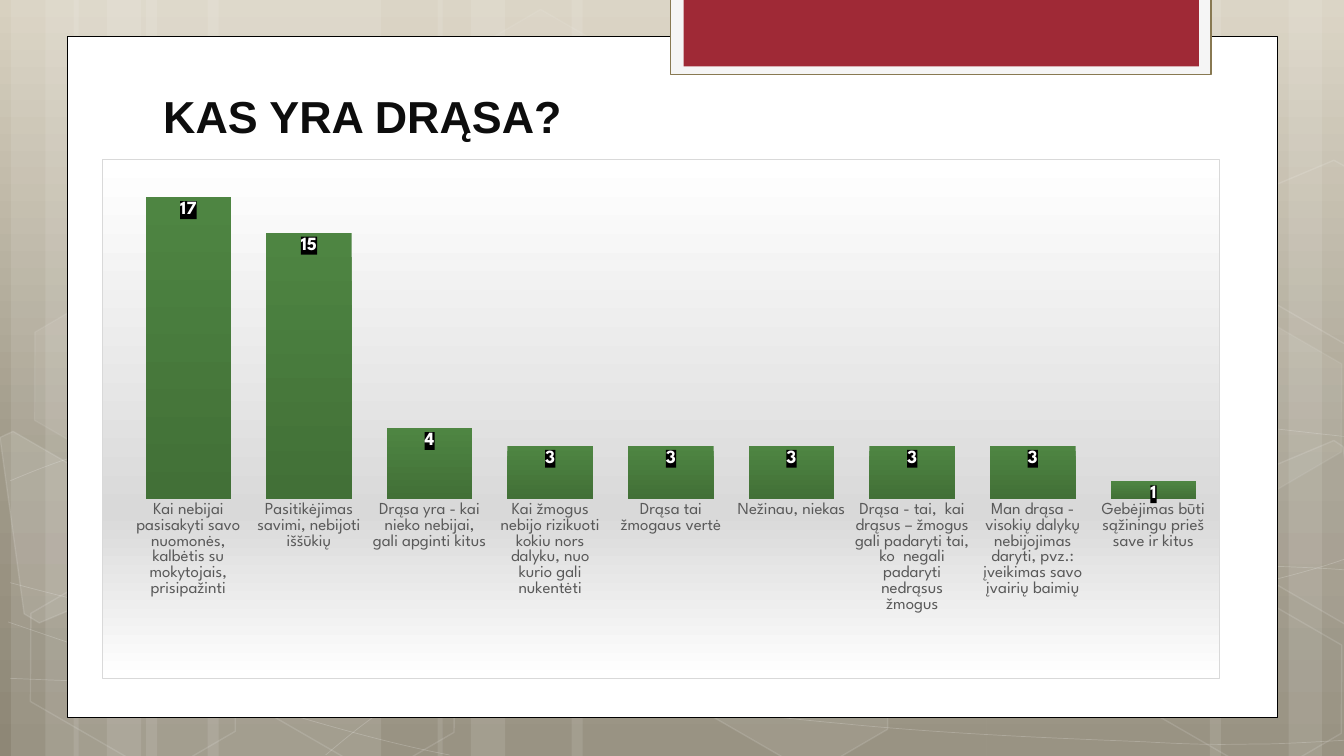
import pptx
import pptx.chart.data
import pptx.dml.color
import pptx.enum.chart
import pptx.enum.shapes
import pptx.enum.text
import pptx.oxml
import pptx.oxml.ns
import pptx.util

Inches = pptx.util.Inches
Pt = pptx.util.Pt
qn = pptx.oxml.ns.qn
RGB = pptx.dml.color.RGBColor.from_string
SHAPE = pptx.enum.shapes.MSO_SHAPE
NS = pptx.oxml.ns.nsdecls("a", "c")

COLORS = {
    "white": "FFFFFF", "black": "000000", "frame": "F5F5F5", "gold": "887952",
    "red": "9F2936", "title": "0D0D0D", "axis": "595959", "border": "D9D9D9",
    "sand": "D8D1C0", "stone": "9F9988", "earth": "8E8776",
    "green": "4E8542", "dark_green": "427037",
}
CHART_FONT = "League Spartan"


def gradient(stops):
    gs = "".join(
        f'<a:gs pos="{pos * 1000}"><a:srgbClr val="{COLORS[name]}"/></a:gs>'
        for pos, name in stops)
    return pptx.oxml.parse_xml(
        f'<a:gradFill {NS} rotWithShape="1"><a:gsLst>{gs}</a:gsLst>'
        '<a:lin ang="5400000" scaled="0"/></a:gradFill>')


def style(sp, fill=None, fill_alpha=100, line=None, width=1, line_alpha=100):
    sp.shadow.inherit = False
    for part, color, alpha in ((sp.fill, fill, fill_alpha), (sp.line.fill, line, line_alpha)):
        if color is None:
            part.background()
            continue
        part.solid()
        part.fore_color.rgb = RGB(COLORS[color])
        if alpha < 100:
            clr = part._xPr.find(".//" + qn("a:srgbClr"))
            clr.append(pptx.oxml.parse_xml(f'<a:alpha {NS} val="{alpha * 1000}"/>'))
    if line:
        sp.line.width = Pt(width)


prs = pptx.Presentation()
prs.slide_width = Inches(13.33)
prs.slide_height = Inches(7.5)
s = prs.slides.add_slide(prs.slide_layouts[6])
s.background.fill.solid()
bg = s._element.find(".//" + qn("p:bgPr"))
bg.replace(bg[0], gradient([(0, "sand"), (62, "stone"), (100, "earth")]))

stripes = [
    (1.45, 2.33), (0.11, 0.67), (0.45, 1.11), (2.06, 2.33), (0.73, 0.67), (1.06, 1.11),
    (9.78, 2.33), (12.78, 0.67), (12, 1.11), (5.67, 4.11), (4.34, 0.67), (4.67, 1.11),
]
for x, w in stripes:
    sp = s.shapes.add_shape(SHAPE.RECTANGLE, Inches(x), 0, Inches(w), Inches(7.5))
    style(sp, "white", 10)

waves = [
    [(0.1, 6.73), (0.82, 6.76), (1.54, 6.79), (2.54, 6.78), (3.54, 6.77), (4.77, 6.75),
     (6.1, 6.65), (7.44, 6.55), (9.33, 6.36), (10.55, 6.17), (11.78, 5.98), (13.03, 5.68),
     (13.43, 5.51)],
    [(0.1, 4.77), (0.48, 4.61), (0.86, 4.46), (1.62, 4.31), (2.38, 4.16), (3.45, 3.94),
     (4.63, 3.87), (5.82, 3.8), (7.25, 3.79), (8.72, 3.87), (10.19, 3.95), (12.63, 4.26),
     (13.43, 4.34)],
    [(0.08, 6.17), (1.69, 6.72), (3.3, 7.27), (4.46, 7.49)],
    [(0.1, 5.78), (0.51, 5.89), (0.93, 6), (1.71, 6.16), (2.48, 6.31), (3.64, 6.56),
     (4.75, 6.73), (5.86, 6.9), (7.27, 7.08), (8.37, 7.18), (9.48, 7.29), (10.66, 7.33),
     (11.37, 7.36), (12.07, 7.4), (12.25, 7.38), (12.6, 7.38), (12.94, 7.37),
     (13.19, 7.35), (13.43, 7.34)],
    [(3.23, 7.49), (3.47, 7.29), (3.7, 7.09), (4.03, 6.91), (4.35, 6.73), (4.8, 6.53),
     (5.17, 6.39), (5.54, 6.25), (5.77, 6.19), (6.26, 6.09), (6.75, 5.99), (7.65, 5.85),
     (8.11, 5.78), (8.58, 5.71), (8.65, 5.71), (9.07, 5.69), (9.48, 5.66), (10.13, 5.63),
     (10.59, 5.62), (11.05, 5.61), (11.82, 5.62), (11.82, 5.62), (12.1, 5.62),
     (12.4, 5.62), (12.7, 5.62), (12.95, 5.63), (13.17, 5.64), (13.29, 5.65),
     (13.41, 5.66), (13.37, 5.65), (13.41, 5.66)],
]
for wave in waves:
    points = [(Inches(x), Inches(y)) for x, y in wave]
    fb = s.shapes.build_freeform(*points[0])
    fb.add_line_segments(points[1:], close=False)
    sp = fb.convert_to_shape()
    outline = sp._element.find(".//" + qn("a:path"))
    segments = outline.findall(qn("a:lnTo"))
    for i in range(0, len(segments), 3):
        curve = pptx.oxml.parse_xml(f"<a:cubicBezTo {NS}/>")
        segments[i].addprevious(curve)
        for segment in segments[i:i + 3]:
            curve.append(segment[0])
            outline.remove(segment)
    style(sp, line="white", width=0.5, line_alpha=20)

hexagons = [
    (4.45, 0.36, 4, 8), (6.62, 5.89, 6, 12), (0.15, 5.91, 0, 12), (0.19, 3.12, 7, 8),
    (2.32, 5.92, 0, 12), (11.12, 5.93, 0, 12), (11.12, 3.14, 7, 8),
]
for x, y, fill_alpha, line_alpha in hexagons:
    sp = s.shapes.add_shape(SHAPE.HEXAGON, Inches(x), Inches(y), Inches(2.34), Inches(1.52))
    sp.adjustments[0] = 0.285
    sp.rotation = 30
    style(sp, "white" if fill_alpha else None, fill_alpha, "white", 1, line_alpha)

edge_pieces = [
    (10, [(0, 4.34), (0.13, 4.28), (1.15, 4.87), (1.27, 5.81), (0.39, 6.18), (0.24, 6.09)]),
    (4, [(12.35, 4.74), (13.23, 4.37), (13.32, 4.43), (13.57, 6.25), (13.49, 6.28),
         (12.47, 5.69)]),
    (0, [(12.35, 1.96), (13.23, 1.59), (13.34, 1.65), (13.57, 3.46), (13.49, 3.5),
         (12.47, 2.91)]),
]
for fill_alpha, corners in edge_pieces:
    points = [(Inches(x), Inches(y)) for x, y in corners]
    fb = s.shapes.build_freeform(*points[0])
    fb.add_line_segments(points[1:], close=True)
    style(fb.convert_to_shape(), "white" if fill_alpha else None, fill_alpha, "white", 1, 12)

panels = [
    (0.67, 0.36, 12, 6.76, "white", "black", 0.5),
    (6.65, -0.02, 5.36, 0.76, "frame", "gold", 1.25),
    (6.78, -0.02, 5.11, 0.68, "red", None, 0),
]
for x, y, w, h, fill, line, width in panels:
    sp = s.shapes.add_shape(SHAPE.RECTANGLE, Inches(x), Inches(y), Inches(w), Inches(h))
    style(sp, fill, line=line, width=width)

title = s.shapes.add_textbox(Inches(1.52), Inches(0.82), Inches(10.24), Inches(0.64))
tf = title.text_frame
tf.word_wrap = True
tf.vertical_anchor = pptx.enum.text.MSO_ANCHOR.BOTTOM
tf.text = "KAS YRA DRĄSA?"
font = tf.paragraphs[0].runs[0].font
font.name, font.size, font.bold = "Arial", Pt(32), True
font.color.rgb = RGB(COLORS["title"])

answers = {
    "Kai nebijai pasisakyti savo nuomonės, kalbėtis su mokytojais, prisipažinti": 17,
    "Pasitikėjimas savimi, nebijoti iššūkių": 15,
    "Drąsa yra - kai nieko nebijai, gali apginti kitus": 4,
    "Kai žmogus nebijo rizikuoti kokiu nors dalyku, nuo kurio gali nukentėti": 3,
    "Drąsa tai žmogaus vertė": 3,
    "Nežinau, niekas": 3,
    "Drąsa - tai,  kai drąsus – žmogus gali padaryti tai, ko  negali padaryti nedrąsus žmogus": 3,
    "Man drąsa - visokių dalykų nebijojimas daryti, pvz.: įveikimas savo įvairių baimių": 3,
    "Gebėjimas būti sąžiningu prieš save ir kitus": 1,
}
data = pptx.chart.data.CategoryChartData()
data.categories = list(answers)
data.add_series("Series 1", list(answers.values()))
chart = s.shapes.add_chart(
    pptx.enum.chart.XL_CHART_TYPE.COLUMN_CLUSTERED,
    Inches(1.01), Inches(1.58), Inches(11.09), Inches(5.16), data).chart
chart.has_legend = False
chart.has_title = False
chart.font.name, chart.font.size = CHART_FONT, Pt(10)
chart.font.color.rgb = RGB(COLORS["black"])

axis = chart.category_axis
axis.major_tick_mark = pptx.enum.chart.XL_TICK_MARK.NONE
axis.format.line.fill.background()
font = axis.tick_labels.font
font.name, font.size = CHART_FONT, Pt(12)
font.color.rgb = RGB(COLORS["axis"])
axis = chart.value_axis
axis.minimum_scale, axis.maximum_scale = 0, 18
axis.has_major_gridlines = False
axis.visible = False

plot = chart.plots[0]
plot.gap_width = 41
plot.vary_by_categories = False
series = plot.series[0]
series.format.fill.solid()
sp_pr = series._element.find(qn("c:spPr"))
sp_pr.replace(sp_pr[0], gradient([(0, "green"), (100, "dark_green")]))
labels = series.data_labels
labels.show_value = True
labels.position = pptx.enum.chart.XL_LABEL_POSITION.INSIDE_END
font = labels.font
font.name, font.size, font.bold = CHART_FONT, Pt(13.3), True
font.color.rgb = RGB(COLORS["white"])
labels._element.find(qn("c:txPr")).addprevious(pptx.oxml.parse_xml(
    f'<c:spPr {NS}><a:solidFill><a:srgbClr val="{COLORS["black"]}"/></a:solidFill></c:spPr>'))

space = chart._chartSpace
area = pptx.oxml.parse_xml(
    f'<c:spPr {NS}><a:ln w="9525"><a:solidFill><a:srgbClr val="{COLORS["border"]}"/>'
    '</a:solidFill></a:ln></c:spPr>')
area.insert(0, gradient([(0, "white"), (68, "border"), (100, "white")]))
space.find(qn("c:chart")).addnext(area)
plot_area = space.find(".//" + qn("c:plotArea"))
for old in plot_area.findall(qn("c:layout")):
    plot_area.remove(old)
plot_area.insert(0, pptx.oxml.parse_xml(
    f'<c:layout {NS}><c:manualLayout><c:layoutTarget val="inner"/>'
    '<c:xMode val="edge"/><c:yMode val="edge"/><c:x val="0.023"/><c:y val="0.038"/>'
    '<c:w val="0.972"/><c:h val="0.616"/></c:manualLayout></c:layout>'))

prs.save("out.pptx")
